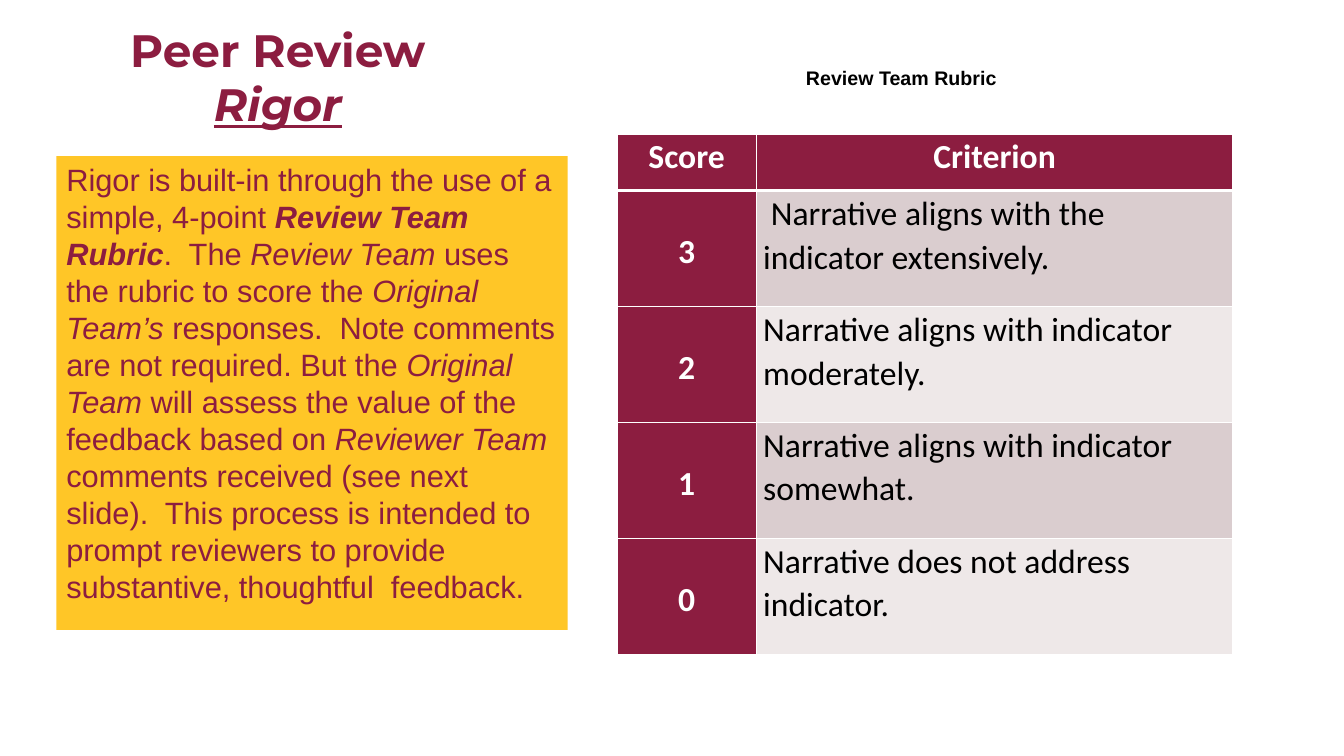
"""Builds the Peer Review Rigor slide with its scoring rubric table."""
from lxml.etree import SubElement
from pptx import Presentation
from pptx.dml.color import RGBColor
from pptx.enum.shapes import MSO_SHAPE
from pptx.enum.text import MSO_ANCHOR as ANCHOR, PP_ALIGN as ALIGN
from pptx.oxml.ns import qn
from pptx.util import Inches, Pt

COLORS = {"maroon": "8C1D40", "gold": "FFC627", "white": "FFFFFF",
          "black": "000000", "rose": "DACDCF", "pale": "EEE8E8"}


def add_run(paragraph, text, font, size, color, style=""):
    run = paragraph.add_run()
    run.text = text
    run.font.name = font
    run.font.size = Pt(size)
    run.font.color.rgb = RGBColor.from_string(COLORS[color])
    run.font.bold = "b" in style
    run.font.italic = "i" in style
    run.font.underline = "u" in style


def add_border(cell, side, points):
    line = SubElement(cell._tc.get_or_add_tcPr(), qn(f"a:{side}"), w=str(Pt(points)))
    fill = SubElement(line, qn("a:solidFill"))
    SubElement(fill, qn("a:srgbClr"), val=COLORS["white"])


prs = Presentation()
prs.slide_width = Inches(13.33)
prs.slide_height = Inches(7.5)
slide = prs.slides.add_slide(prs.slide_layouts[6])

title = slide.shapes.add_textbox(Inches(0.56), Inches(0.08), Inches(4.39), Inches(1.27)).text_frame
title.word_wrap = True
title.vertical_anchor = ANCHOR.BOTTOM
title.paragraphs[0].alignment = ALIGN.CENTER
add_run(title.paragraphs[0], "Peer Review ", "Montserrat", 32.4, "maroon", "b")
add_run(title.paragraphs[0], "Rigor", "Montserrat", 32.4, "maroon", "biu")

heading = slide.shapes.add_textbox(Inches(6.12), Inches(0.61), Inches(5.64), Inches(0.5)).text_frame
heading.word_wrap = True
heading.paragraphs[0].alignment = ALIGN.CENTER
add_run(heading.paragraphs[0], "Review Team Rubric", "Arial", 14, "black", "b")

panel = slide.shapes.add_shape(MSO_SHAPE.RECTANGLE, Inches(0.56), Inches(1.55), Inches(5.07), Inches(4.7))
panel.shadow.inherit = False
panel.fill.solid()
panel.fill.fore_color.rgb = RGBColor.from_string(COLORS["gold"])
panel.line.fill.background()
panel.text_frame.word_wrap = True
panel.text_frame.vertical_anchor = ANCHOR.TOP
explanation = panel.text_frame.paragraphs[0]
explanation.alignment = ALIGN.LEFT
explanation.line_spacing = Pt(26.4)
for text, style in [
    ("Rigor is built-in through the use of a simple, 4-point ", ""),
    ("Review Team Rubric", "bi"),
    (".  The ", ""),
    ("Review Team ", "i"),
    ("uses the rubric to score the ", ""),
    ("Original Team’s", "i"),
    (" responses.  Note comments are not required. But the ", ""),
    ("Original Team ", "i"),
    ("will assess the value of the feedback based on ", ""),
    ("Reviewer Team ", "i"),
    ("comments received (see next slide).  This process is intended to prompt "
     "reviewers to provide substantive, thoughtful  feedback.", ""),
]:
    add_run(explanation, text, "Arial", 22, "maroon", style)

rubric_rows = [
    ("Score", "Criterion"),
    ("3", " Narrative aligns with the indicator extensively."),
    ("2", "Narrative aligns with indicator moderately."),
    ("1", "Narrative aligns with indicator somewhat."),
    ("0", "Narrative does not address indicator."),
]
rubric = slide.shapes.add_table(5, 2, Inches(6.12), Inches(1.33), Inches(6.11), Inches(5.16)).table
rubric.columns[0].width = Inches(1.38)
rubric.columns[1].width = Inches(4.73)
for r, row in enumerate(rubric_rows):
    rubric.rows[r].height = Inches(1.15 if r else 0.56)
    for c, text in enumerate(row):
        cell = rubric.cell(r, c)
        is_criterion = r > 0 and c == 1
        is_score = r > 0 and c == 0
        cell.margin_left = cell.margin_right = Inches(0.07)
        cell.margin_top = Inches(0.05 if is_score else 0)
        cell.margin_bottom = 0
        cell.vertical_anchor = ANCHOR.MIDDLE if is_score else ANCHOR.TOP
        for side in ("lnL", "lnR", "lnT", "lnB"):
            header_rule = (r, side) in [(0, "lnB"), (1, "lnT")]
            add_border(cell, side, 3 if header_rule else 1)
        band = "rose" if r % 2 else "pale"
        cell.fill.solid()
        cell.fill.fore_color.rgb = RGBColor.from_string(COLORS[band if is_criterion else "maroon"])
        entry = cell.text_frame.paragraphs[0]
        entry.alignment = ALIGN.LEFT if is_criterion else ALIGN.CENTER
        entry.line_spacing = 1.07
        add_run(entry, text, "Calibri", 24, "black" if is_criterion else "white",
                "" if is_criterion else "b")

prs.save("out.pptx")
